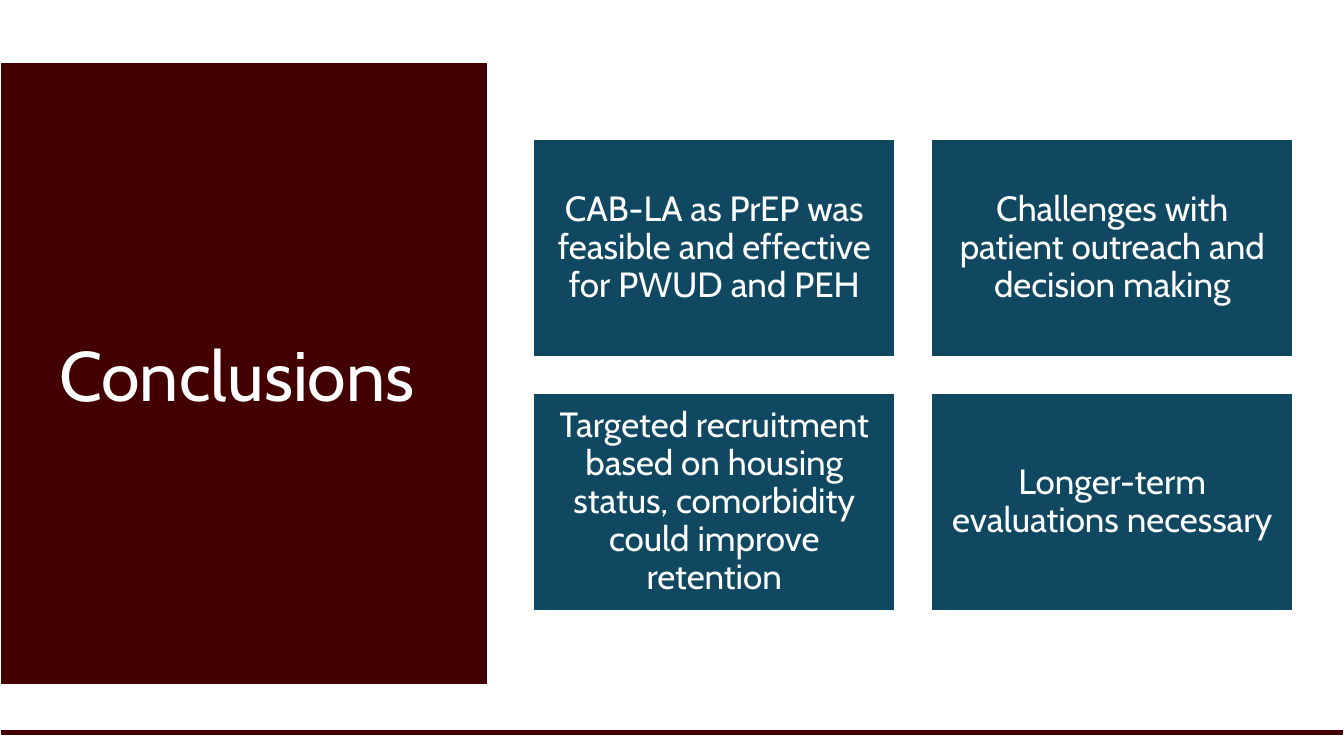
from pptx import Presentation
from pptx.dml.color import RGBColor
from pptx.enum.shapes import MSO_SHAPE as Preset
from pptx.enum.text import MSO_ANCHOR as Anchor, PP_ALIGN as Align
from pptx.util import Cm, Pt

MAROON = "420000"
TEAL = "104862"
WHITE = "FFFFFF"


def add_block(left, top, width, height, color):
    block = page.shapes.add_shape(
        Preset.RECTANGLE, Cm(left), Cm(top), Cm(width), Cm(height))
    block.shadow.inherit = False
    block.fill.solid()
    block.fill.fore_color.rgb = RGBColor.from_string(color)
    block.line.color.rgb = RGBColor.from_string(WHITE)
    block.line.width = Pt(1.5)
    return block


def write(shape, text, size, align):
    frame = shape.text_frame
    frame.text = text
    frame.word_wrap = True
    frame.vertical_anchor = Anchor.MIDDLE
    para = frame.paragraphs[0]
    para.alignment = align
    para.line_spacing = 0.9
    font = para.runs[0].font
    font.name = "Cabin"
    font.size = Pt(size)
    font.color.rgb = RGBColor.from_string(WHITE)


deck = Presentation()
deck.slide_width, deck.slide_height = Cm(33.87), Cm(19.05)
page = deck.slides.add_slide(deck.slide_layouts[5])

add_block(0, 1.55, 12.29, 15.72, MAROON)

conclusions = [
    "CAB-LA as PrEP was feasible and effective for PWUD and PEH",
    "Challenges with patient outreach and decision making",
    "Targeted recruitment based on housing status, comorbidity could improve retention",
    "Longer-term evaluations necessary",
]
card_width, card_height, gap = 9.12, 5.49, 0.91
for index, conclusion in enumerate(conclusions):
    row, column = divmod(index, 2)
    card = add_block(13.44 + column * (card_width + gap),
                     3.51 + row * (card_height + gap),
                     card_width, card_height, TEAL)
    write(card, conclusion, 25, Align.CENTER)
    frame = card.text_frame
    frame.margin_left = frame.margin_right = Cm(0.25)
    frame.margin_top = frame.margin_bottom = Cm(0.25)

add_block(0, 18.36, 33.87, 0.18, MAROON)

title = page.shapes.title
title.left, title.top = Cm(1.24), Cm(1.78)
title.width, title.height = Cm(9.5), Cm(15.52)
write(title, "Conclusions", 50, Align.LEFT)
title.element.getparent().append(title.element)

deck.save("out.pptx")
